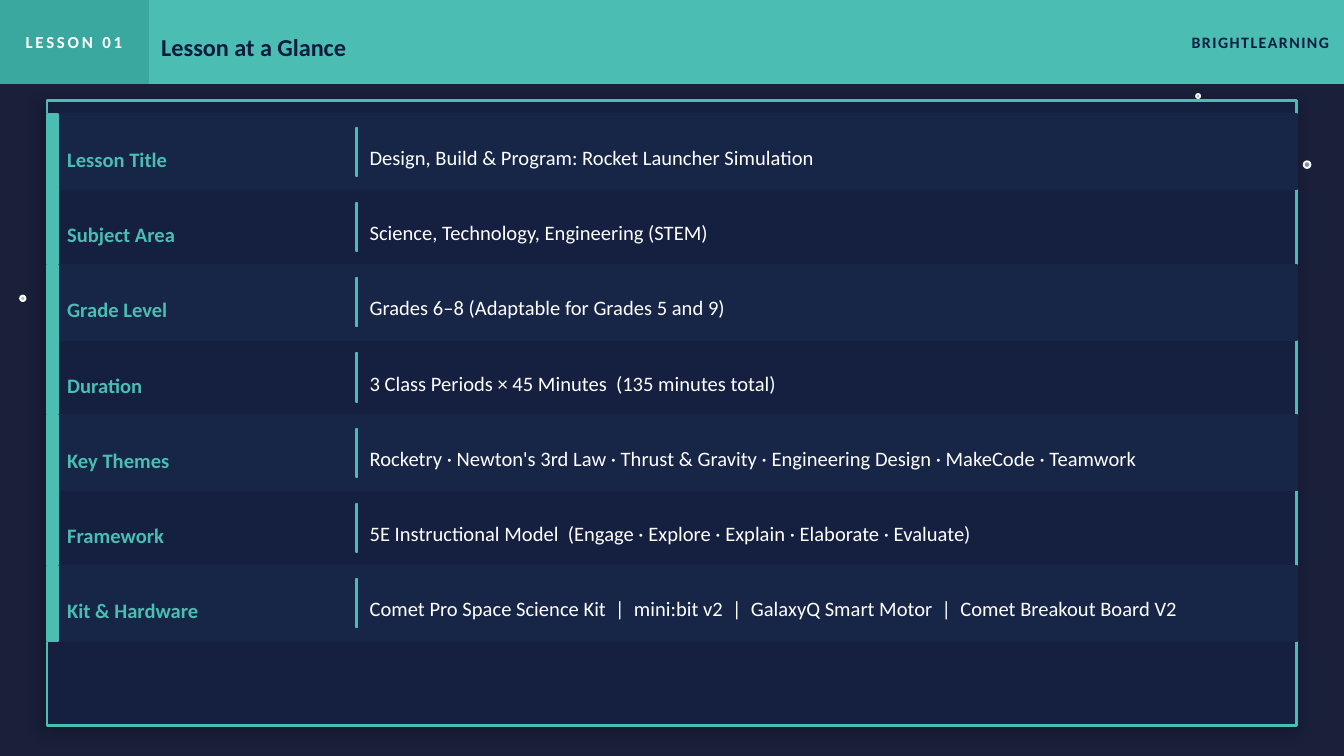
from dataclasses import dataclass

from lxml import etree
from pptx import Presentation
from pptx.dml.color import RGBColor
from pptx.enum.shapes import MSO_SHAPE
from pptx.enum.text import MSO_ANCHOR, PP_ALIGN
from pptx.oxml.ns import qn
from pptx.util import Inches, Pt

RECTANGLE, OVAL = MSO_SHAPE.RECTANGLE, MSO_SHAPE.OVAL
MIDDLE = MSO_ANCHOR.MIDDLE
LEFT, CENTER, RIGHT = PP_ALIGN.LEFT, PP_ALIGN.CENTER, PP_ALIGN.RIGHT


@dataclass(frozen=True)
class Theme:
    font: str = "Calibri"
    background: str = "1A1F3A"
    teal: str = "4BBDB3"
    dark_teal: str = "3AA89E"
    navy: str = "0D1B3E"
    card: str = "152040"
    stripe: str = "172547"
    white: str = "FFFFFF"
    shadow: str = "000000"
    title_size: float = 13
    body_size: float = 11
    tag_size: float = 9
    brand_size: float = 8.5


THEME = Theme()

# Grid, in inches
SLIDE_WIDTH = 10
HEADER_HEIGHT = 0.62
TAG_WIDTH = 1.1
MARGIN = 0.35
CARD_WIDTH = SLIDE_WIDTH - 2 * MARGIN
CARD_TOP, CARD_HEIGHT = 0.75, 4.65
FIRST_ROW, ROW_HEIGHT = 0.85, 0.56
LABEL_LEFT, LABEL_WIDTH = 0.5, 2.1
DIVIDER_LEFT = 2.65
VALUE_LEFT, VALUE_WIDTH = 2.75, 6.75
TEXT_PAD, DIVIDER_PAD = 0.05, 0.1

# Left, top, diameter, opacity in percent
STARS = [(8.9, 0.7, 0.03, 60), (9.7, 1.2, 0.05, 50), (0.15, 2.2, 0.04, 70)]

ROWS = [
    ("Lesson Title", "Design, Build & Program: Rocket Launcher Simulation"),
    ("Subject Area", "Science, Technology, Engineering (STEM)"),
    ("Grade Level", "Grades 6–8 (Adaptable for Grades 5 and 9)"),
    ("Duration", "3 Class Periods × 45 Minutes  (135 minutes total)"),
    ("Key Themes", "Rocketry · Newton's 3rd Law · Thrust & Gravity · "
                   "Engineering Design · MakeCode · Teamwork"),
    ("Framework", "5E Instructional Model  "
                  "(Engage · Explore · Explain · Elaborate · Evaluate)"),
    ("Kit & Hardware", "Comet Pro Space Science Kit  |  mini:bit v2  |  "
                       "GalaxyQ Smart Motor  |  Comet Breakout Board V2"),
]


def add_block(slide, left, top, width, height, fill, line=None,
              line_width=1, kind=RECTANGLE):
    shape = slide.shapes.add_shape(
        kind, Inches(left), Inches(top), Inches(width), Inches(height))
    shape.shadow.inherit = False
    shape.fill.solid()
    shape.fill.fore_color.rgb = RGBColor.from_string(fill)
    shape.line.color.rgb = RGBColor.from_string(line or fill)
    shape.line.width = Pt(line_width)
    return shape


def set_alpha(color, percent):
    etree.SubElement(color, qn("a:alpha"), val=str(percent * 1000))


def add_shadow(shape, blur, distance, angle, opacity):
    effects = shape._element.spPr.find(qn("a:effectLst"))
    shadow = etree.SubElement(
        effects, qn("a:outerShdw"), blurRad=str(Pt(blur)),
        dist=str(Pt(distance)), dir=str(angle * 60000),
        algn="bl", rotWithShape="0")
    color = etree.SubElement(shadow, qn("a:srgbClr"), val=THEME.shadow)
    set_alpha(color, opacity)


def add_text(slide, text, left, top, width, height, *, size, color,
             bold=False, align=LEFT, inset_top=0, inset_right=0, spacing=0):
    box = slide.shapes.add_textbox(
        Inches(left), Inches(top), Inches(width), Inches(height))
    frame = box.text_frame
    frame.word_wrap = True
    frame.vertical_anchor = MIDDLE
    frame.margin_left = frame.margin_bottom = 0
    frame.margin_top = Inches(inset_top)
    frame.margin_right = Inches(inset_right)
    paragraph = frame.paragraphs[0]
    paragraph.alignment = align
    run = paragraph.add_run()
    run.text = text
    run.font.name = THEME.font
    run.font.size = Pt(size)
    run.font.bold = bold
    run.font.color.rgb = RGBColor.from_string(color)
    if spacing:
        run._r.get_or_add_rPr().set("spc", str(round(spacing * 100)))


def add_star(slide, left, top, diameter, opacity):
    star = add_block(slide, left, top, diameter, diameter, THEME.white,
                     kind=OVAL)
    fill = star._element.spPr.find(qn("a:solidFill"))
    set_alpha(fill.find(qn("a:srgbClr")), opacity)


def add_header(slide):
    add_block(slide, 0, 0, SLIDE_WIDTH, HEADER_HEIGHT, THEME.teal)
    add_block(slide, 0, 0, TAG_WIDTH, HEADER_HEIGHT, THEME.dark_teal)
    add_text(slide, "LESSON 01", 0, 0, TAG_WIDTH, HEADER_HEIGHT,
             size=THEME.tag_size, color=THEME.white, bold=True,
             align=CENTER, spacing=1.5)
    add_text(slide, "Lesson at a Glance", TAG_WIDTH + 0.1, 0, 7.5,
             HEADER_HEIGHT, size=THEME.title_size, color=THEME.navy,
             bold=True, inset_top=0.08)
    add_text(slide, "BRIGHTLEARNING", 7.7, 0, 2.3, HEADER_HEIGHT,
             size=THEME.brand_size, color=THEME.navy, bold=True,
             align=RIGHT, inset_right=0.11, spacing=0.8)


def add_row(slide, index, label, value):
    top = FIRST_ROW + index * ROW_HEIGHT
    text_top, text_height = top + TEXT_PAD, ROW_HEIGHT - 2 * TEXT_PAD
    if index % 2 == 0:
        add_block(slide, MARGIN, top, CARD_WIDTH, ROW_HEIGHT, THEME.stripe)
    add_block(slide, MARGIN, top, 0.08, ROW_HEIGHT, THEME.teal)
    add_text(slide, label, LABEL_LEFT, text_top, LABEL_WIDTH, text_height,
             size=THEME.body_size, color=THEME.teal, bold=True,
             inset_top=0.11)
    add_block(slide, DIVIDER_LEFT, top + DIVIDER_PAD, 0.01,
              ROW_HEIGHT - 2 * DIVIDER_PAD, THEME.teal)
    add_text(slide, value, VALUE_LEFT, text_top, VALUE_WIDTH, text_height,
             size=THEME.body_size, color=THEME.white, inset_top=0.08)


def main():
    presentation = Presentation()
    presentation.slide_width = Inches(SLIDE_WIDTH)
    presentation.slide_height = Inches(SLIDE_WIDTH * 9 / 16)
    slide = presentation.slides.add_slide(presentation.slide_layouts[6])
    slide.background.fill.solid()
    slide.background.fill.fore_color.rgb = RGBColor.from_string(
        THEME.background)

    # Starry backdrop and header band
    for star in STARS:
        add_star(slide, *star)
    add_header(slide)

    # Card with one row per lesson fact
    card = add_block(slide, MARGIN, CARD_TOP, CARD_WIDTH, CARD_HEIGHT,
                     THEME.card, line=THEME.teal, line_width=1.5)
    add_shadow(card, blur=8, distance=3, angle=135, opacity=25)
    for index, (label, value) in enumerate(ROWS):
        add_row(slide, index, label, value)

    presentation.save("out.pptx")


if __name__ == "__main__":
    main()
